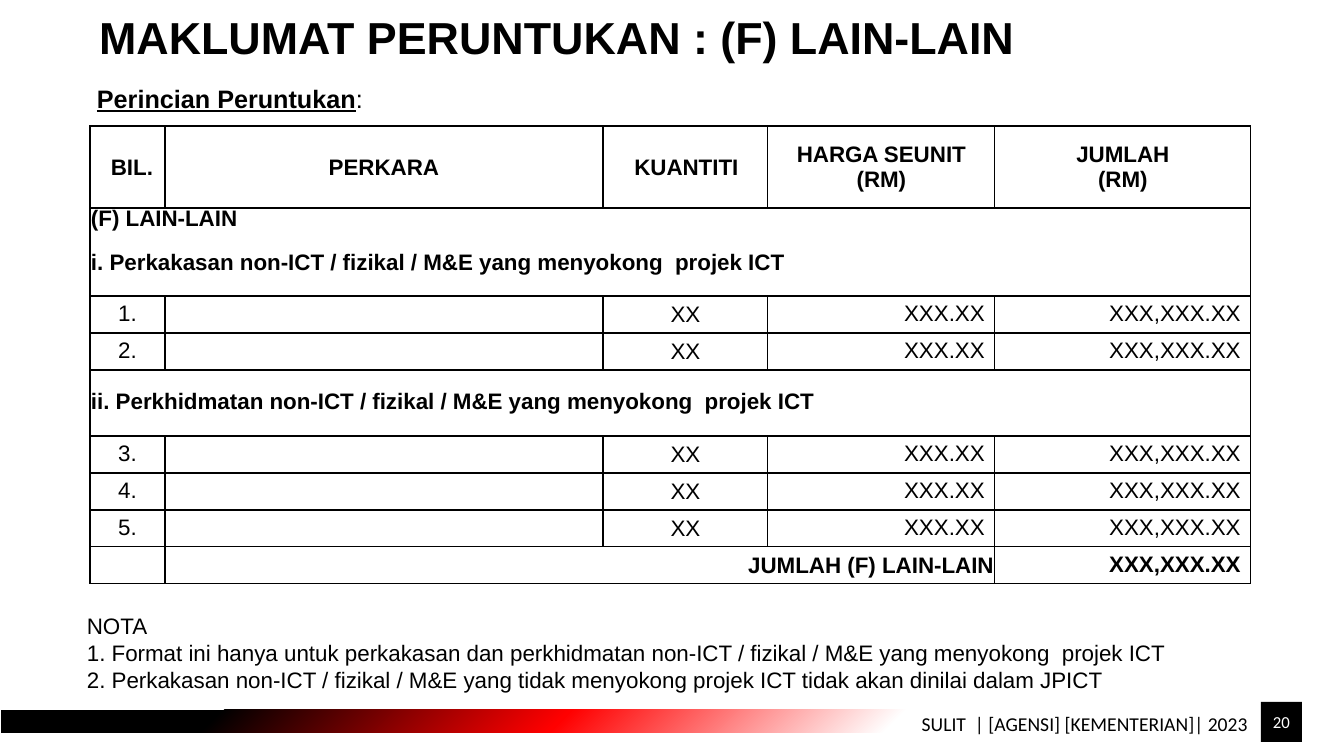
from lxml.etree import SubElement
from pptx import Presentation
from pptx.dml.color import RGBColor
from pptx.enum.shapes import MSO_SHAPE
from pptx.enum.text import MSO_ANCHOR, MSO_AUTO_SIZE, PP_ALIGN
from pptx.oxml import parse_xml
from pptx.oxml.ns import nsdecls, qn
from pptx.util import Pt

PX = 914400 / 100.8
BLACK = RGBColor(0, 0, 0)
RED = RGBColor(255, 0, 0)
WHITE = RGBColor(255, 255, 255)


def px(*lengths):
    return [round(length * PX) for length in lengths]


def style(para, size, bold=False, align=PP_ALIGN.LEFT, name="Arial", color=BLACK):
    para.alignment = align
    para.font.name = name
    para.font.size = Pt(size)
    para.font.bold = bold
    para.font.color.rgb = color


deck = Presentation()
deck.slide_width, deck.slide_height = px(1344, 756)
page = deck.slides.add_slide(deck.slide_layouts[5])

bar = page.shapes.add_shape(MSO_SHAPE.RECTANGLE, *px(1, 710, 1272, 23))
bar.shadow.inherit = False
bar.line.fill.background()
stops = "".join(
    f'<a:gs pos="{percent * 1000}"><a:srgbClr val="{color}"/></a:gs>'
    for percent, color in [(30, WHITE), (56, RED), (83, BLACK)]
)
gradient = parse_xml(
    f'<a:gradFill {nsdecls("a")} rotWithShape="1"><a:gsLst>{stops}</a:gsLst>'
    '<a:path path="circle"><a:fillToRect l="100000" t="100000"/></a:path></a:gradFill>'
)
bar._element.spPr.find(qn("a:prstGeom")).addnext(gradient)

footer = page.shapes.add_textbox(*px(792, 708, 466, 34)).text_frame
footer.word_wrap = True
footer.vertical_anchor = MSO_ANCHOR.MIDDLE
footer.text = "SULIT  | [AGENSI] [KEMENTERIAN]| 2023"
footer.paragraphs[0].line_spacing = 0.9
style(footer.paragraphs[0], 14, align=PP_ALIGN.RIGHT, name="Calibri")

item = ["XX", "XXX.XX", "XXX,XXX.XX"]
rows = [
    ["BIL.", "PERKARA", "KUANTITI", "HARGA SEUNIT\n(RM)", "JUMLAH\n(RM)"],
    ["(F) LAIN-LAIN\ni. Perkakasan non-ICT / fizikal / M&E yang menyokong  projek ICT"],
    ["1.", "", *item],
    ["2.", "", *item],
    ["ii. Perkhidmatan non-ICT / fizikal / M&E yang menyokong  projek ICT"],
    ["3.", "", *item],
    ["4.", "", *item],
    ["5.", "", *item],
    ["", "JUMLAH (F) LAIN-LAIN", "", "", "XXX,XXX.XX"],
]
widths = [75, 438, 165, 227, 256]
heights = [82, 88, 37, 37, 66, 37, 37, 37, 37]
HEADER, FIRST_SECTION, SECOND_SECTION, TOTAL = 0, 1, 4, 8
SECTIONS = (FIRST_SECTION, SECOND_SECTION)

table = page.shapes.add_table(
    len(rows), len(widths), *px(90, 126, sum(widths), sum(heights))
).table
table.first_row = table.horz_banding = False
for column, width in zip(table.columns, px(*widths)):
    column.width = width
for row, height in zip(table.rows, px(*heights)):
    row.height = height
for section in SECTIONS:
    table.cell(section, 0).merge(table.cell(section, 4))
table.cell(TOTAL, 1).merge(table.cell(TOTAL, 3))

for r, texts in enumerate(rows):
    for c in range(len(widths)):
        cell = table.cell(r, c)
        cell.text = texts[c] if c < len(texts) else ""
        amount = r != HEADER and c >= 3
        if not amount:
            cell.margin_left, cell.margin_top, cell.margin_right = px(1, 1, 1)
            cell.margin_bottom = 0
            cell.vertical_anchor = MSO_ANCHOR.MIDDLE
        if r in SECTIONS:
            align = PP_ALIGN.LEFT
        elif amount or (r == TOTAL and c == 1):
            align = PP_ALIGN.RIGHT
        else:
            align = PP_ALIGN.CENTER
        for para in cell.text_frame.paragraphs:
            style(para, 16, r in (HEADER, *SECTIONS, TOTAL), align)
            if r in SECTIONS or (c == 0 and r != HEADER):
                para.line_spacing = Pt(15.7)
        cell.fill.background()
        properties = cell._tc.get_or_add_tcPr()
        for place, side in enumerate(["lnL", "lnR", "lnT", "lnB"]):
            border = SubElement(properties, qn(f"a:{side}"), w=str(Pt(1)))
            fill = SubElement(border, qn("a:solidFill"))
            SubElement(fill, qn("a:srgbClr"), val=str(BLACK))
            properties.insert(place, border)

table.cell(HEADER, 0).margin_left = px(10)[0]
table.cell(HEADER, 2).margin_left = px(3)[0]
section_cell = table.cell(FIRST_SECTION, 0)
section_cell.vertical_anchor = MSO_ANCHOR.TOP
section_cell.text_frame.paragraphs[1].space_before = Pt(15.7)

notes = page.shapes.add_textbox(*px(77, 607, 1113, 92)).text_frame
notes.word_wrap = False
notes.auto_size = MSO_AUTO_SIZE.SHAPE_TO_FIT_TEXT
notes.text = (
    "NOTA\n"
    "1. Format ini hanya untuk perkakasan dan perkhidmatan non-ICT / fizikal / M&E"
    " yang menyokong  projek ICT\n"
    "2. Perkakasan non-ICT / fizikal / M&E yang tidak menyokong projek ICT"
    " tidak akan dinilai dalam JPICT"
)
for para in notes.paragraphs:
    style(para, 16)

title = page.shapes.title
title.left, title.top, title.width, title.height = px(89, 5, 1162, 81)
title.text_frame.text = "MAKLUMAT PERUNTUKAN : (F) LAIN-LAIN"
title.text_frame.auto_size = MSO_AUTO_SIZE.NONE
title.text_frame.vertical_anchor = MSO_ANCHOR.TOP
title.text_frame.paragraphs[0].space_before = Pt(6.4)
style(title.text_frame.paragraphs[0], 32, True)

subtitle = page.shapes.add_textbox(*px(87, 78, 842, 40)).text_frame
subtitle.word_wrap = True
para = subtitle.paragraphs[0]
para.space_before = Pt(3.6)
style(para, 18, align=PP_ALIGN.JUSTIFY)
span = para.add_run()
span.text = "Perincian Peruntukan"
span.font.bold = span.font.underline = True
para.add_run().text = ":"

number = page.shapes.add_shape(MSO_SHAPE.RECTANGLE, *px(1261, 702, 41, 40))
number.shadow.inherit = False
number.fill.solid()
number.fill.fore_color.rgb = BLACK
number.line.fill.background()
number.text_frame.text = "20"
number.text_frame.vertical_anchor = MSO_ANCHOR.MIDDLE
style(number.text_frame.paragraphs[0], 12, align=PP_ALIGN.CENTER, name="Calibri", color=WHITE)

deck.save("out.pptx")
